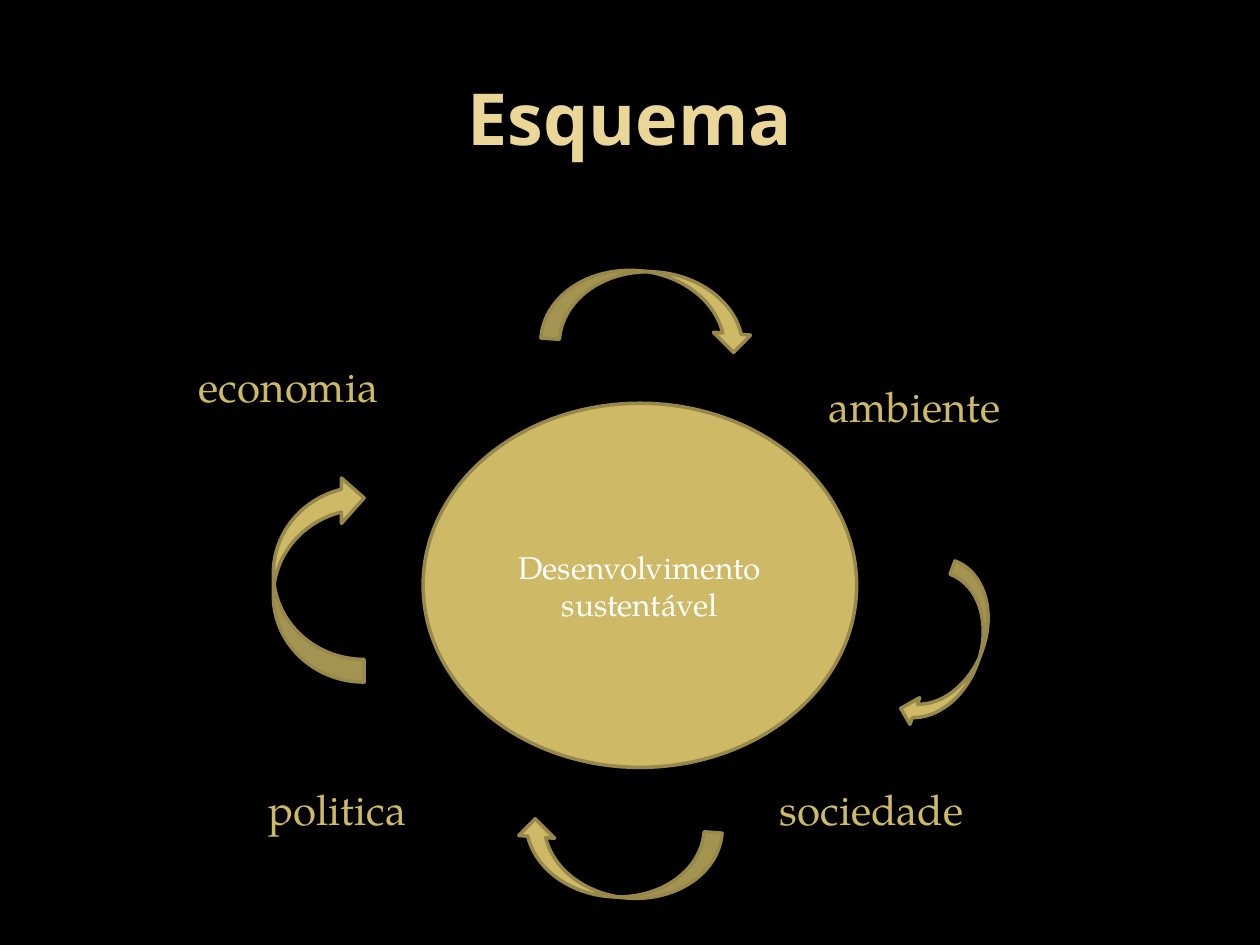
from dataclasses import dataclass

from pptx import Presentation
from pptx.dml.color import RGBColor as RGB
from pptx.enum.shapes import MSO_SHAPE as Shape
from pptx.enum.text import MSO_ANCHOR as Anchor, MSO_AUTO_SIZE as AutoSize, PP_ALIGN as Align
from pptx.util import Cm, Pt


@dataclass(frozen=True)
class Theme:
    background: RGB = RGB(0x00, 0x00, 0x00)
    title: RGB = RGB(0xEA, 0xD6, 0x96)
    gold: RGB = RGB(0xCE, 0xB9, 0x66)
    outline: RGB = RGB(0x98, 0x89, 0x4B)
    white: RGB = RGB(0xFF, 0xFF, 0xFF)
    heading_font: str = "Open Sans"
    body_font: str = "TeX Gyre Pagella"
    title_size: int = 41
    label_size: int = 24
    centre_size: int = 18
    line_width: int = 2


@dataclass(frozen=True)
class Box:
    """Position and size in centimetres."""
    left: float
    top: float
    width: float
    height: float

    def lengths(self) -> tuple:
        return Cm(self.left), Cm(self.top), Cm(self.width), Cm(self.height)


@dataclass(frozen=True)
class Arrow:
    box: Box
    rotation: float


@dataclass(frozen=True)
class Label:
    text: str
    left: float
    top: float
    width: float


THEME = Theme()
LABEL_HEIGHT = 1.27
TITLE_BOX = Box(1.27, 0.76, 22.86, 3.18)
CENTRE_BOX = Box(8.53, 8.13, 8.74, 7.34)

ARROWS = [
    Arrow(Box(11.71, 15.29, 1.45, 4.14), 94.4),
    Arrow(Box(18.62, 11.4, 1.14, 3.45), 20.2),
    Arrow(Box(12.34, 4.09, 1.5, 4.27), 274.3),
    Arrow(Box(5.51, 9.58, 1.83, 4.17), 180),
]

LABELS = [
    Label("ambiente", 16.46, 7.54, 4.17),
    Label("economia", 3.76, 7.14, 6.35),
    Label("sociedade", 15.47, 15.67, 4.57),
    Label("politica", 5.16, 15.67, 5.56),
]


def write(sp, text: str, *, size: int, color: RGB, font: str = THEME.body_font,
          bold: bool = False, align=Align.LEFT, anchor=Anchor.TOP) -> None:
    tf = sp.text_frame
    tf.word_wrap = True
    tf.vertical_anchor = anchor
    p = tf.paragraphs[0]
    p.alignment = align
    r = p.add_run()
    r.text = text
    r.font.name = font
    r.font.size = Pt(size)
    r.font.bold = bold
    r.font.color.rgb = color


def add_gold_shape(s, kind, box: Box, rotation: float = 0):
    sp = s.shapes.add_shape(kind, *box.lengths())
    sp.rotation = rotation
    sp.shadow.inherit = False
    sp.fill.solid()
    sp.fill.fore_color.rgb = THEME.gold
    sp.line.color.rgb = THEME.outline
    sp.line.width = Pt(THEME.line_width)
    return sp


def add_label(s, label: Label) -> None:
    box = Box(label.left, label.top, label.width, LABEL_HEIGHT)
    sp = s.shapes.add_textbox(*box.lengths())
    write(sp, label.text, size=THEME.label_size, color=THEME.gold)
    sp.text_frame.auto_size = AutoSize.SHAPE_TO_FIT_TEXT


def add_title(s, text: str) -> None:
    sp = s.shapes.title
    sp.left, sp.top, sp.width, sp.height = TITLE_BOX.lengths()
    write(sp, text, size=THEME.title_size, color=THEME.title, font=THEME.heading_font,
          bold=True, align=Align.CENTER, anchor=Anchor.MIDDLE)


def main() -> None:
    prs = Presentation()
    prs.slide_width, prs.slide_height = Cm(25.4), Cm(19.05)
    s = prs.slides.add_slide(prs.slide_layouts.get_by_name("Title Only"))
    s.background.fill.solid()
    s.background.fill.fore_color.rgb = THEME.background

    add_title(s, "Esquema")
    centre = add_gold_shape(s, Shape.OVAL, CENTRE_BOX)
    write(centre, "Desenvolvimento sustentável", size=THEME.centre_size,
          color=THEME.white, align=Align.CENTER, anchor=Anchor.MIDDLE)
    for arrow in ARROWS:
        add_gold_shape(s, Shape.CURVED_LEFT_ARROW, arrow.box, arrow.rotation)
    for label in LABELS:
        add_label(s, label)

    prs.save("out.pptx")


if __name__ == "__main__":
    main()
